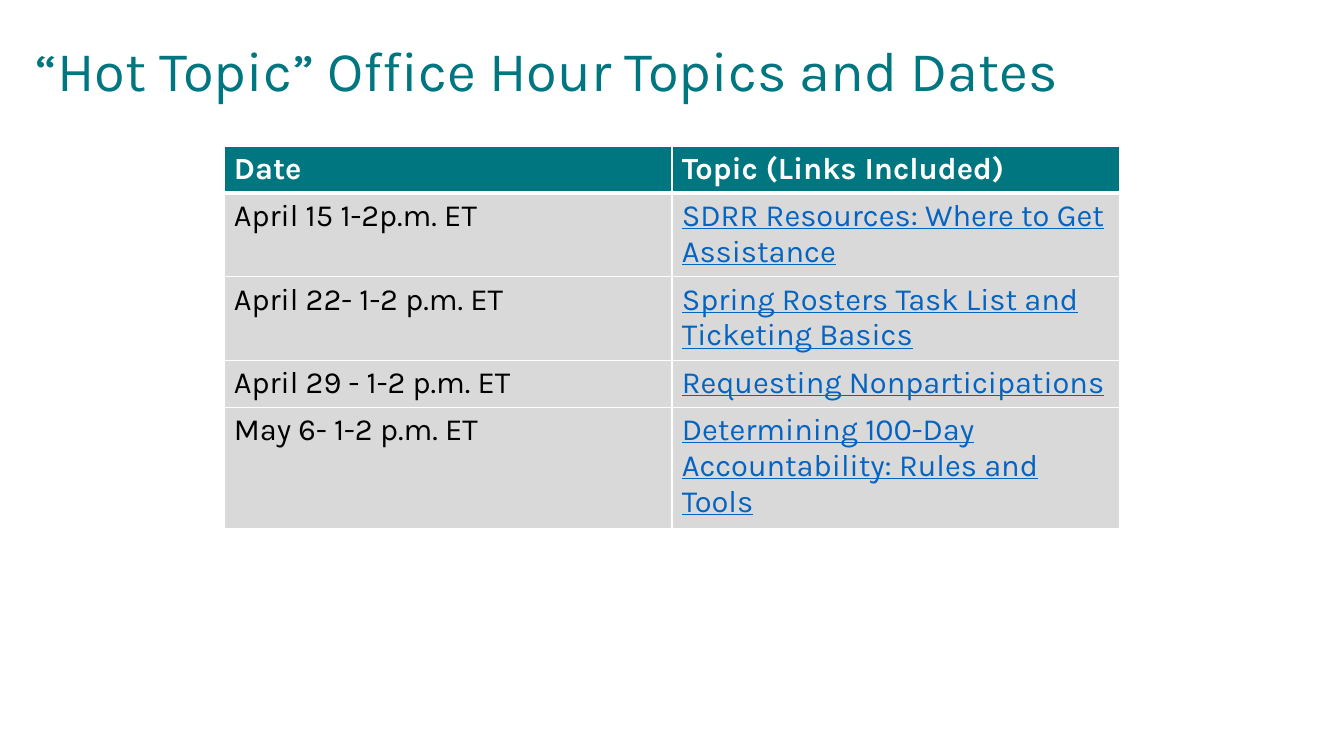
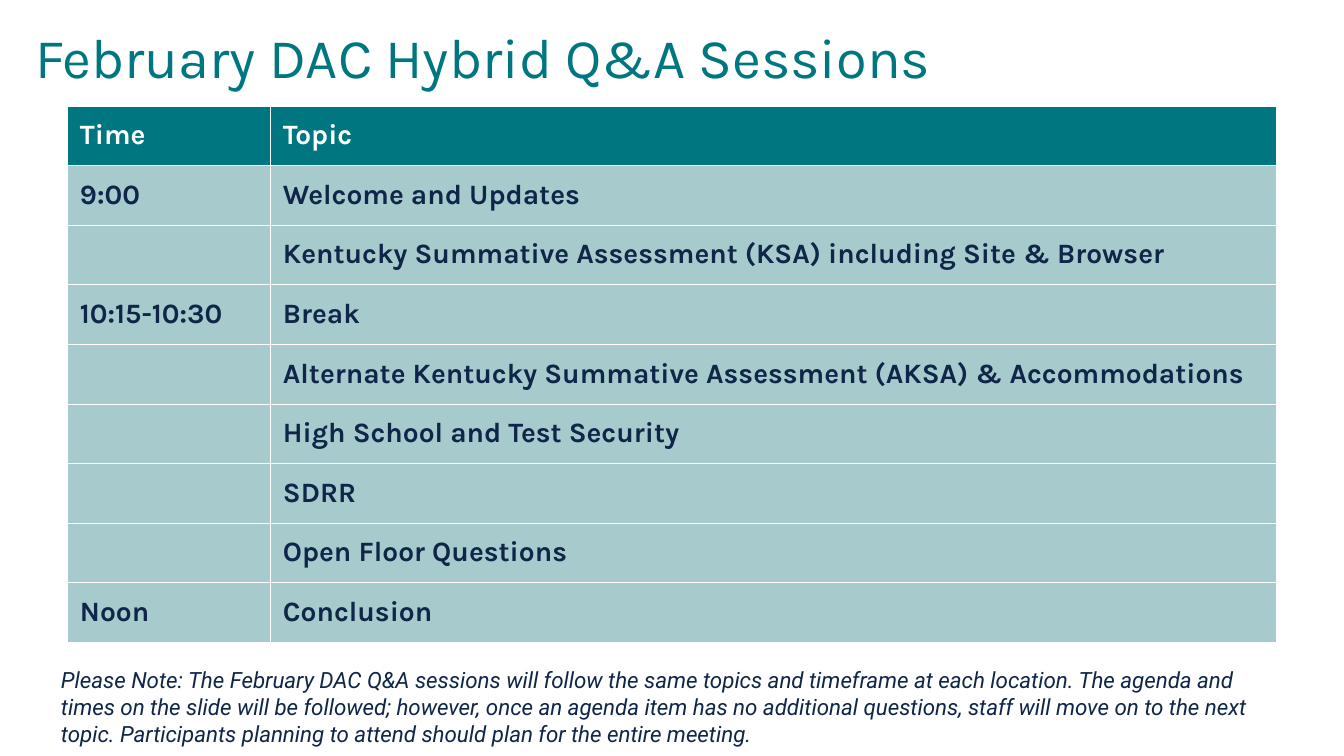
from dataclasses import dataclass

from lxml.etree import SubElement
from pptx import Presentation
from pptx.dml.color import RGBColor
from pptx.enum.text import MSO_ANCHOR
from pptx.oxml.ns import qn
from pptx.util import Emu, Pt

SCALE = 914400 / 100.8


@dataclass(frozen=True)
class Theme:
    """Colours, fonts and type sizes shared by the slides."""

    teal: str = "007780"
    pale_teal: str = "A7CBCD"
    gray: str = "D9D9D9"
    navy: str = "102649"
    black: str = "000000"
    white: str = "FFFFFF"
    link: str = "0563C1"
    heading_font: str = "Karla"
    note_font: str = "Roboto"
    title_size: int = 40
    dates_size: int = 22
    agenda_size: int = 20
    note_size: int = 16


THEME = Theme()


@dataclass(frozen=True)
class TableLook:
    """Appearance of one table, with body colours listed by column."""

    size: int
    fill: str
    colors: tuple
    bold: bool
    underlines: tuple
    border: float
    header_rule: float
    inset_x: int
    inset_y: int


DATES_LOOK = TableLook(THEME.dates_size, THEME.gray, (THEME.black, THEME.link),
                       False, (False, True), 1, 3, 10, 5)
AGENDA_LOOK = TableLook(THEME.agenda_size, THEME.pale_teal, (THEME.navy, THEME.navy),
                        True, (False, False), 0.75, 0.75, 13, 13)

DATES = [
    ("Date", "Topic (Links Included)"),
    ("April 15 1-2p.m. ET", "SDRR Resources: Where to Get Assistance"),
    ("April 22- 1-2 p.m. ET", "Spring Rosters Task List and Ticketing Basics"),
    ("April 29 - 1-2 p.m. ET", "Requesting Nonparticipations"),
    ("May 6- 1-2 p.m. ET", "Determining 100-Day Accountability: Rules and Tools"),
]
AGENDA = [
    ("Time", "Topic"),
    ("9:00", "Welcome and Updates"),
    ("", "Kentucky Summative Assessment (KSA) including Site & Browser"),
    ("10:15-10:30", "Break"),
    ("", "Alternate Kentucky Summative Assessment (AKSA) & Accommodations"),
    ("", "High School and Test Security"),
    ("", "SDRR"),
    ("", "Open Floor Questions"),
    ("Noon", "Conclusion"),
]
NOTE = (
    "Please Note: The February DAC Q&A sessions will follow the same topics and "
    "timeframe at each location. The agenda and times on the slide will be followed; "
    "however, once an agenda item has no additional questions, staff will move on to "
    "the next topic. Participants planning to attend should plan for the entire meeting."
)


def px(length):
    """Turn px into EMU."""
    return Emu(round(length * SCALE))


def add_run(para, text, font, size, color, bold=False, italic=False, underline=False):
    """Add one styled run to a paragraph."""
    span = para.add_run()
    span.text = text
    span.font.name = font
    span.font.size = Pt(size)
    span.font.color.rgb = RGBColor.from_string(color)
    span.font.bold = bold
    span.font.italic = italic
    span.font.underline = underline


def set_insets(holder, inset_x, inset_y):
    """Set the inner margins of a cell or text frame."""
    holder.margin_left = holder.margin_right = px(inset_x)
    holder.margin_top = holder.margin_bottom = px(inset_y)


def add_text_box(page, box):
    """Place a wrapping text box and return its text frame."""
    frame = page.shapes.add_textbox(*map(px, box)).text_frame
    frame.word_wrap = True
    set_insets(frame, 10, 5)
    return frame


def add_title(page, box, text):
    """Place the slide title, centred vertically in its box."""
    frame = add_text_box(page, box)
    frame.margin_left = px(35)
    frame.vertical_anchor = MSO_ANCHOR.MIDDLE
    para = frame.paragraphs[0]
    para.line_spacing = 0.9
    add_run(para, text, THEME.heading_font, THEME.title_size, THEME.teal)


def add_note(page, box, text):
    """Place the italic note below a table."""
    para = add_text_box(page, box).paragraphs[0]
    add_run(para, text, THEME.note_font, THEME.note_size, THEME.navy, italic=True)


def set_borders(cell, widths):
    """Draw white borders of the given widths on a cell's sides."""
    properties = cell._tc.get_or_add_tcPr()
    for side, width in widths.items():
        line = SubElement(properties, qn(f"a:ln{side}"), w=str(Pt(width)))
        fill = SubElement(line, qn("a:solidFill"))
        SubElement(fill, qn("a:srgbClr"), val=THEME.white)


def style_cell(cell, text, row, column, look):
    """Fill, frame and label one table cell."""
    header = row == 0
    set_borders(cell, {
        "L": look.border,
        "R": look.border,
        "T": look.header_rule if row == 1 else look.border,
        "B": look.header_rule if header else look.border,
    })
    cell.fill.solid()
    cell.fill.fore_color.rgb = RGBColor.from_string(THEME.teal if header else look.fill)
    set_insets(cell, look.inset_x, look.inset_y)
    para = cell.text_frame.paragraphs[0]
    if text:
        add_run(para, text, THEME.heading_font, look.size,
                THEME.white if header else look.colors[column],
                bold=header or look.bold,
                underline=not header and look.underlines[column])
    else:
        para.font.size = Pt(look.size)


def add_schedule(page, left, top, widths, heights, rows, look):
    """Place a two-column schedule table."""
    frame = page.shapes.add_table(len(rows), len(widths), px(left), px(top),
                                  px(sum(widths)), px(sum(heights)))
    table = frame.table
    table.first_row = table.horz_banding = False
    for column, width in zip(table.columns, widths):
        column.width = px(width)
    for row, height in zip(table.rows, heights):
        row.height = px(height)
    for row, texts in enumerate(rows):
        for column, text in enumerate(texts):
            style_cell(table.cell(row, column), text, row, column, look)


def add_page(deck):
    """Add a blank slide."""
    return deck.slides.add_slide(deck.slide_layouts[6])


def build_dates_page(deck):
    """Build the slide of office hour dates."""
    page = add_page(deck)
    add_title(page, (0, 0, 1159, 146), "“Hot Topic” Office Hour Topics and Dates")
    add_schedule(page, 224, 146, (448, 448), (47, 82, 82, 46, 118), DATES, DATES_LOOK)


def build_agenda_page(deck):
    """Build the slide of the session agenda."""
    page = add_page(deck)
    add_title(page, (0, 0, 1159, 120), "February DAC Hybrid Q&A Sessions")
    heights = [536 / len(AGENDA)] * len(AGENDA)
    add_schedule(page, 67, 106, (203, 1007), heights, AGENDA, AGENDA_LOOK)
    add_note(page, (51, 661, 1241, 92), NOTE)


def main():
    """Build and save the deck."""
    deck = Presentation()
    deck.slide_width, deck.slide_height = px(1344), px(756)
    build_dates_page(deck)
    build_agenda_page(deck)
    deck.save("out.pptx")


if __name__ == "__main__":
    main()
